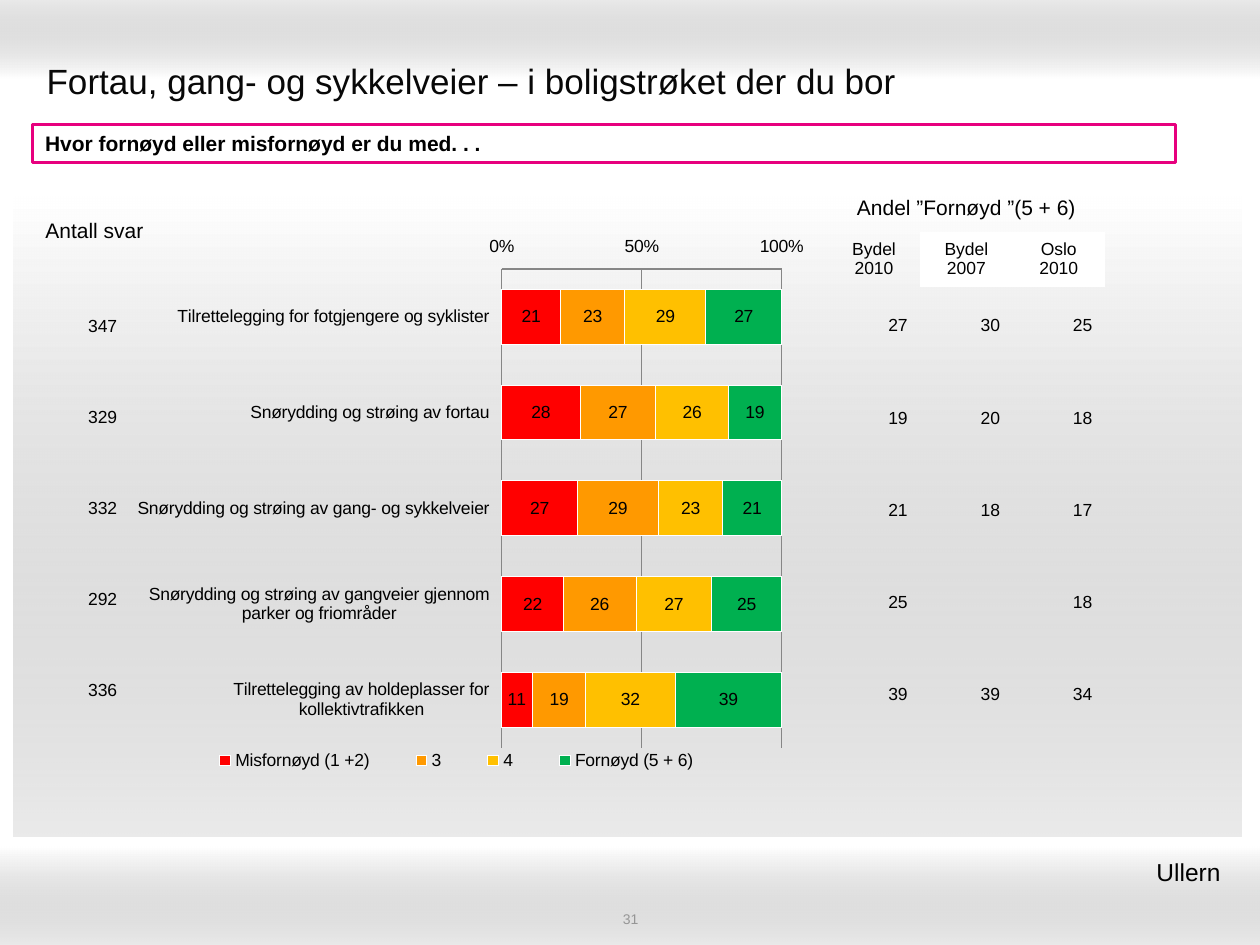
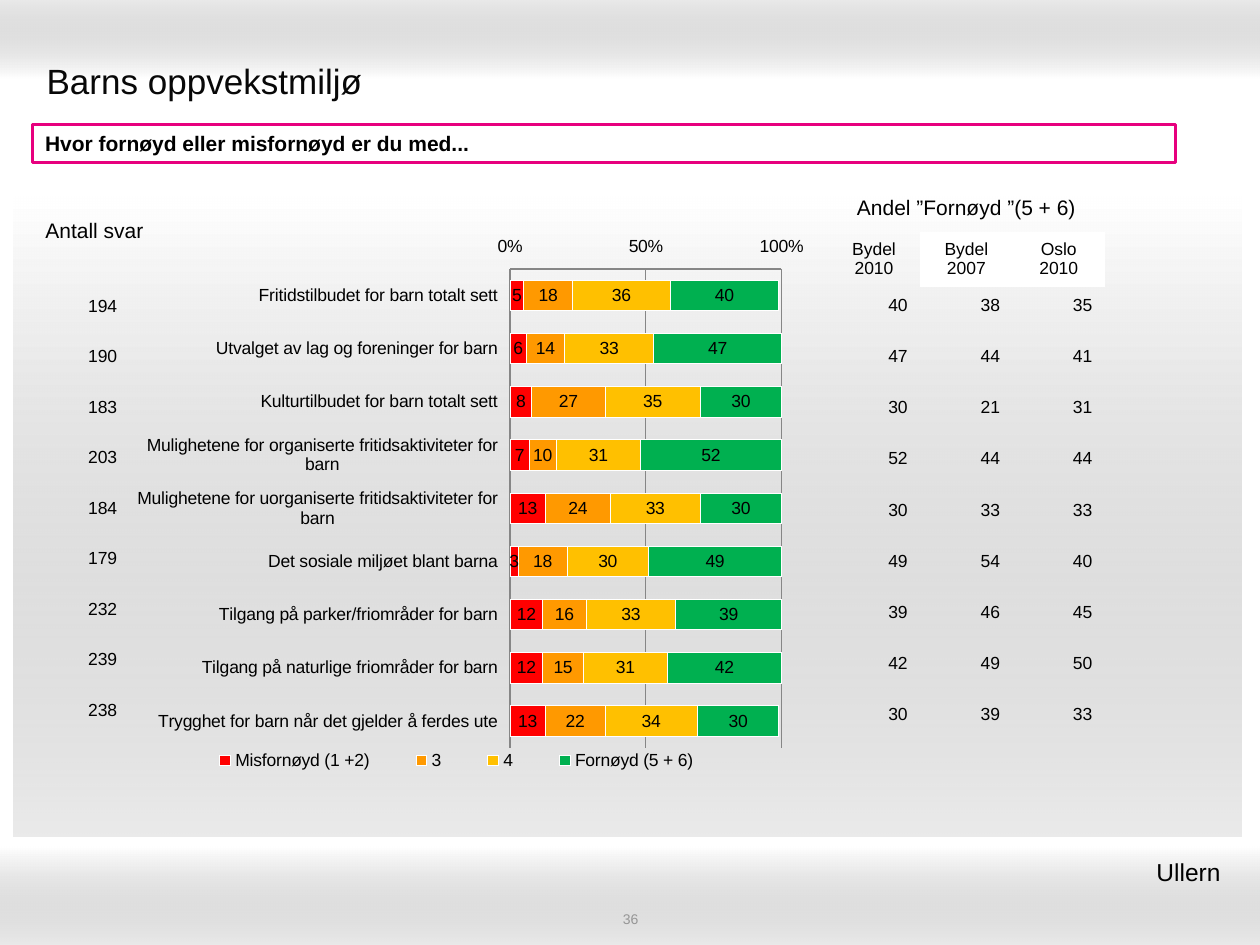
import dataclasses

import lxml.etree
import pptx
import pptx.chart.data
import pptx.dml.color
import pptx.enum.chart
import pptx.enum.shapes
import pptx.enum.text
import pptx.oxml.ns
import pptx.util

Inches = pptx.util.Inches
ALIGN = pptx.enum.text.PP_ALIGN
ANCHOR = pptx.enum.text.MSO_ANCHOR
NO_STYLE_NO_GRID = "{2D5ABB26-0587-4C30-8999-92F81FD0307C}"


@dataclasses.dataclass(frozen=True)
class Theme:
    font: str = "Arial"
    title_size: int = 20
    area_size: int = 14
    heading_size: int = 12
    body_size: int = 10
    page_size: int = 8
    title: str = "080808"
    text: str = "000000"
    muted: str = "969696"
    accent: str = "E7007E"
    white: str = "FFFFFF"
    shade: str = "999999"
    grid: str = "868686"
    answers: tuple = ("FF0000", "FF9900", "FFC000", "00B050")


@dataclasses.dataclass(frozen=True)
class Box:
    left: float
    top: float
    width: float
    height: float

    def lengths(self):
        return [Inches(value) for value in dataclasses.astuple(self)]


THEME = Theme()
ANSWERS = ("Misfornøyd (1 +2)", "3", "4", "Fornøyd (5 + 6)")
SHARE_COLUMNS = (("Bydel", "2010"), ("Bydel", "2007"), ("Oslo", "2010"))

# Each row: question, number of answers, shares per answer, (district 2007, Oslo 2010)
SURVEYS = (
    {
        "title": "Fortau, gang- og sykkelveier – i boligstrøket der du bor",
        "question": "Hvor fornøyd eller misfornøyd er du med. . .",
        "page": "31",
        "plot_left": 0.545,
        "rows": (
            ("Tilrettelegging for fotgjengere og syklister", 347, (21, 23, 29, 27), (30, 25)),
            ("Snørydding og strøing av fortau", 329, (28, 27, 26, 19), (20, 18)),
            ("Snørydding og strøing av gang- og sykkelveier", 332, (27, 29, 23, 21), (18, 17)),
            ("Snørydding og strøing av gangveier gjennom parker og friområder", 292,
             (22, 26, 27, 25), ("", 18)),
            ("Tilrettelegging av holdeplasser for kollektivtrafikken", 336,
             (11, 19, 32, 39), (39, 34)),
        ),
    },
    {
        "title": "Barns oppvekstmiljø",
        "question": "Hvor fornøyd eller misfornøyd er du med...",
        "page": "36",
        "plot_left": 0.557,
        "rows": (
            ("Fritidstilbudet for barn totalt sett", 194, (5, 18, 36, 40), (38, 35)),
            ("Utvalget av lag og foreninger for barn", 190, (6, 14, 33, 47), (44, 41)),
            ("Kulturtilbudet for barn totalt sett", 183, (8, 27, 35, 30), (21, 31)),
            ("Mulighetene for organiserte fritidsaktiviteter for barn", 203,
             (7, 10, 31, 52), (44, 44)),
            ("Mulighetene for uorganiserte fritidsaktiviteter for barn", 184,
             (13, 24, 33, 30), (33, 33)),
            ("Det sosiale miljøet blant barna", 179, (3, 18, 30, 49), (54, 40)),
            ("Tilgang på parker/friområder for barn", 232, (12, 16, 33, 39), (46, 45)),
            ("Tilgang på naturlige friområder for barn", 239, (12, 15, 31, 42), (49, 50)),
            ("Trygghet for barn når det gjelder å ferdes ute", 238, (13, 22, 34, 30), (39, 33)),
        ),
    },
)


def rgb(color):
    return pptx.dml.color.RGBColor.from_string(color)


def style_font(font, size, color=THEME.text, bold=False):
    font.name = THEME.font
    font.size = pptx.util.Pt(size)
    font.bold = bold
    font.color.rgb = rgb(color)


def write(frame, lines, size, color=THEME.text, align=ALIGN.LEFT, bold=False):
    """Put each line in its own paragraph."""
    for index, line in enumerate(lines):
        paragraph = frame.add_paragraph() if index else frame.paragraphs[0]
        paragraph.alignment = align
        run = paragraph.add_run()
        run.text = line
        style_font(run.font, size, color, bold)


def add_text(slide, box, text, size, color=THEME.text, align=ALIGN.LEFT, inset=None):
    frame = slide.shapes.add_textbox(*box.lengths()).text_frame
    frame.word_wrap = True
    if inset is not None:
        frame.margin_left = frame.margin_right = Inches(inset)
        frame.margin_top = frame.margin_bottom = Inches(inset)
        frame.vertical_anchor = ANCHOR.MIDDLE
    write(frame, [text], size, color, align)


def add_rectangle(slide, box):
    shape = slide.shapes.add_shape(pptx.enum.shapes.MSO_SHAPE.RECTANGLE, *box.lengths())
    shape.shadow.inherit = False
    return shape


def move_bands_to_master(presentation, slide):
    """Draw the shaded bands and place them behind everything on the master."""
    bands = (
        (Box(0, 0, 10, 0.62), 90),
        (Box(0, 6.72, 10, 0.78), 270),
        (Box(0.11, 1.56, 9.74, 5.08), 270),
    )
    tree = presentation.slide_master.shapes.element
    for index, (box, angle) in enumerate(bands):
        band = add_rectangle(slide, box)
        band.line.fill.background()
        band.fill.gradient()
        band.fill.gradient_angle = angle
        for stop, position, color in zip(band.fill.gradient_stops, (0, 1),
                                         (THEME.white, THEME.shade)):
            stop.position = position
            stop.color.rgb = rgb(color)
        last_color = band.element.xpath(".//a:gs/a:srgbClr")[-1]
        lxml.etree.SubElement(last_color, pptx.oxml.ns.qn("a:alpha"), val="20000")
        band.element.xpath(".//p:cNvPr")[0].set("id", str(101 + index))
        tree.insert(2 + index, band.element)


def add_title(slide, box, text):
    title = slide.shapes.title
    title.left, title.top, title.width, title.height = box.lengths()
    title.text_frame.vertical_anchor = ANCHOR.MIDDLE
    write(title.text_frame, [text], THEME.title_size, THEME.title)


def add_question(slide, box, text):
    shape = add_rectangle(slide, box)
    shape.fill.solid()
    shape.fill.fore_color.rgb = rgb(THEME.white)
    shape.line.color.rgb = rgb(THEME.accent)
    shape.line.width = pptx.util.Pt(2)
    shape.text_frame.word_wrap = True
    shape.text_frame.vertical_anchor = ANCHOR.TOP
    write(shape.text_frame, [text], THEME.heading_size, bold=True)


def add_plain_table(slide, box, row_count, column_count):
    frame = slide.shapes.add_table(row_count, column_count, *box.lengths())
    frame.element.xpath(".//a:tableStyleId")[0].text = NO_STYLE_NO_GRID
    table = frame.table
    table.first_row = table.horz_banding = False
    for row in table.rows:
        row.height = Inches(box.height / row_count)
    for cell in table.iter_cells():
        cell.fill.background()
        cell.vertical_anchor = ANCHOR.MIDDLE
    return table


def add_number_table(slide, box, rows):
    table = add_plain_table(slide, box, len(rows), len(rows[0]))
    numbers = [number for row in rows for number in row]
    for cell, number in zip(table.iter_cells(), numbers):
        if number != "":
            write(cell.text_frame, [str(number)], THEME.body_size, align=ALIGN.RIGHT)


def add_share_heading(slide, box):
    table = add_plain_table(slide, box, 2, len(SHARE_COLUMNS))
    table.rows[0].height = Inches(0.37)
    table.rows[1].height = Inches(box.height - 0.37)
    heading = table.cell(0, 0)
    heading.merge(table.cell(0, len(SHARE_COLUMNS) - 1))
    write(heading.text_frame, ["Andel ”Fornøyd ”(5 + 6)"], THEME.heading_size,
          align=ALIGN.CENTER)
    for column, lines in enumerate(SHARE_COLUMNS):
        cell = table.cell(1, column)
        write(cell.text_frame, lines, THEME.body_size, align=ALIGN.CENTER)
        if column:
            cell.fill.solid()
            cell.fill.fore_color.rgb = rgb(THEME.white)


def add_count_heading(slide, box):
    cell = add_plain_table(slide, box, 1, 1).cell(0, 0)
    write(cell.text_frame, ["Antall svar"], THEME.heading_size, align=ALIGN.CENTER)


def chart_layout(x, y, width, height, inner=False):
    """Manual layout, in shares of the chart."""
    qn = pptx.oxml.ns.qn
    layout = lxml.etree.Element(qn("c:layout"))
    manual = lxml.etree.SubElement(layout, qn("c:manualLayout"))
    settings = [("layoutTarget", "inner")] if inner else []
    settings += [("xMode", "edge"), ("yMode", "edge"),
                 ("x", x), ("y", y), ("w", width), ("h", height)]
    for name, value in settings:
        lxml.etree.SubElement(manual, qn("c:" + name), val=str(value))
    return layout


def format_axes(chart):
    enums = pptx.enum.chart
    for axis in (chart.category_axis, chart.value_axis):
        axis.tick_label_position = enums.XL_TICK_LABEL_POSITION.LOW
        axis.major_tick_mark = axis.minor_tick_mark = enums.XL_TICK_MARK.NONE
        axis.format.line.color.rgb = rgb(THEME.grid)
    chart.category_axis.reverse_order = True
    axis = chart.value_axis
    axis.major_tick_mark = enums.XL_TICK_MARK.INSIDE
    axis.minimum_scale, axis.maximum_scale, axis.major_unit = 0, 100, 50
    axis.tick_labels.number_format = "General\\%"
    axis.tick_labels.number_format_is_linked = False
    axis.has_major_gridlines = True
    axis.major_gridlines.format.line.color.rgb = rgb(THEME.grid)


def add_answer_chart(slide, box, rows, plot_left):
    data = pptx.chart.data.CategoryChartData()
    data.categories = [row[0] for row in rows]
    for index, answer in enumerate(ANSWERS):
        data.add_series(answer, [row[2][index] for row in rows])
    chart = slide.shapes.add_chart(
        pptx.enum.chart.XL_CHART_TYPE.BAR_STACKED, *box.lengths(), data).chart
    chart.has_title = False
    style_font(chart.font, THEME.body_size)
    format_axes(chart)

    plot = chart.plots[0]
    plot.gap_width, plot.overlap = 75, 100
    plot.vary_by_categories = False
    for series, color in zip(plot.series, THEME.answers):
        series.format.fill.solid()
        series.format.fill.fore_color.rgb = rgb(color)
        series.format.line.color.rgb = rgb(THEME.white)
        labels = series.data_labels
        labels.show_value = True
        labels.number_format = "0"
        labels.number_format_is_linked = False

    chart.has_legend = True
    chart.legend.position = pptx.enum.chart.XL_LEGEND_POSITION.BOTTOM
    chart.legend.include_in_layout = False
    chart.element.xpath(".//c:legendPos")[0].addnext(chart_layout(0.08, 0.91, 0.8, 0.05))
    plot_area = chart.element.xpath(".//c:plotArea")[0]
    for layout in plot_area.xpath("./c:layout"):
        plot_area.remove(layout)
    plot_area.insert(0, chart_layout(plot_left, 0.076, round(0.948 - plot_left, 3), 0.837, True))


def build_survey_slide(slide, survey):
    rows = survey["rows"]
    add_title(slide, Box(0.27, 0.36, 9.45, 0.55), survey["title"])
    add_text(slide, Box(3.42, 7.22, 3.17, 0.14), survey["page"], THEME.page_size,
             THEME.muted, ALIGN.CENTER, inset=0)
    add_question(slide, Box(0.26, 0.99, 9.07, 0.3), survey["question"])
    add_answer_chart(slide, Box(0.98, 1.79, 5.51, 4.54), rows, survey["plot_left"])
    add_number_table(slide, Box(6.57, 2.22, 2.2, 3.66),
                     [(shares[-1], *others) for _, _, shares, others in rows])
    add_share_heading(slide, Box(6.57, 1.47, 2.2, 0.8))
    add_number_table(slide, Box(0.51, 2.23, 0.52, 3.61), [(row[1],) for row in rows])
    add_count_heading(slide, Box(0.04, 1.54, 1.42, 0.59))
    add_text(slide, Box(6.1, 6.75, 3.74, 0.34), "Ullern ", THEME.area_size,
             align=ALIGN.RIGHT)


def main():
    presentation = pptx.Presentation()
    presentation.slide_width, presentation.slide_height = Inches(10), Inches(7.5)
    title_only = presentation.slide_layouts[5]
    slides = [presentation.slides.add_slide(title_only) for _ in SURVEYS]
    move_bands_to_master(presentation, slides[0])
    for slide, survey in zip(slides, SURVEYS):
        build_survey_slide(slide, survey)
    presentation.save("out.pptx")


if __name__ == "__main__":
    main()
